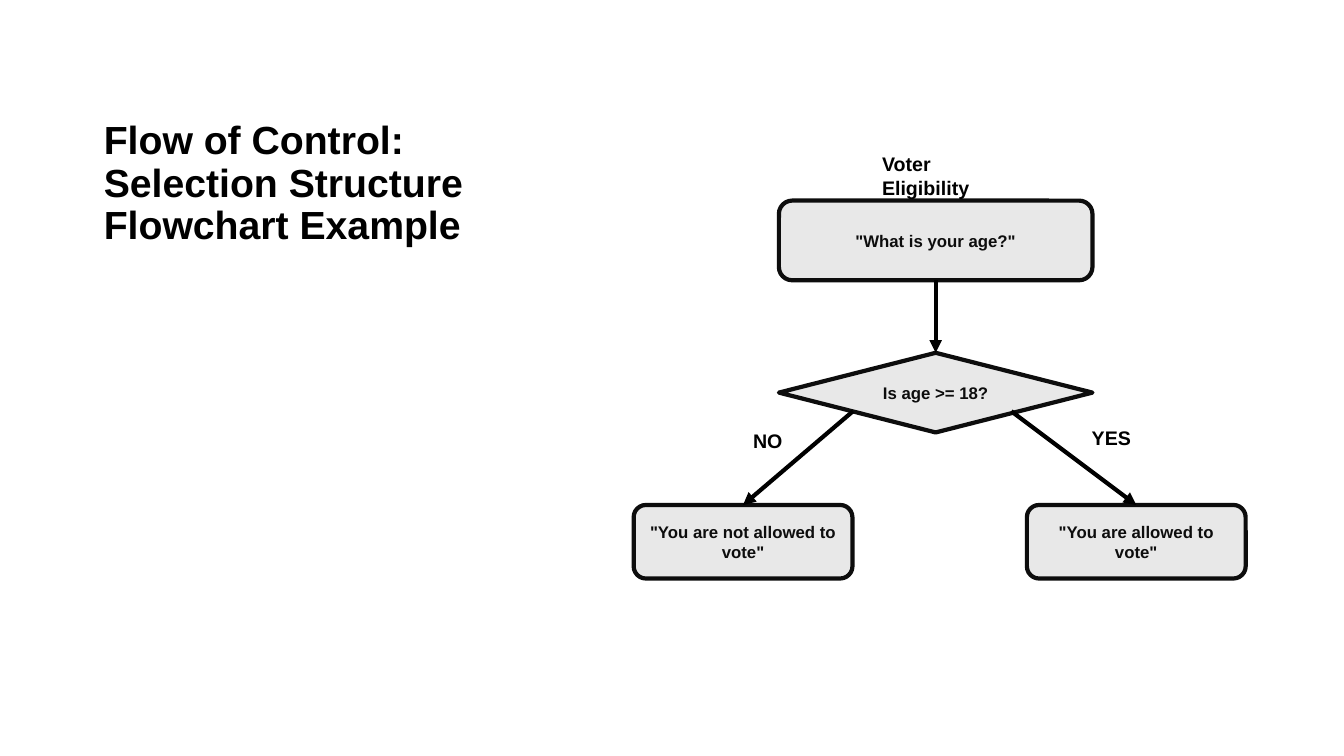
from pptx import Presentation
from pptx.dml.color import RGBColor
from pptx.enum.shapes import MSO_CONNECTOR as Link, MSO_SHAPE as Kind
from pptx.enum.text import MSO_ANCHOR as Anchor, MSO_AUTO_SIZE as Fit, PP_ALIGN as Align
from pptx.oxml.ns import qn
from pptx.util import Inches, Pt
from lxml.etree import SubElement

BLACK = RGBColor(0x00, 0x00, 0x00)
INK = RGBColor(0x0D, 0x0D, 0x0D)
GREY = RGBColor(0xE8, 0xE8, 0xE8)
FONT = "Arial"

# Flowchart grid in inches: column centres and row tops
LEFT, MID, RIGHT = 7.37, 9.28, 11.27
TOP, STEP = 1.99, 1.51
ROWS = [TOP + STEP * i for i in range(3)]
WIDE = (3.11, 0.79)
SMALL = (2.17, 0.73)


def write(frame, text, size, color, align=Align.LEFT):
    frame.word_wrap = True
    para = frame.paragraphs[0]
    para.alignment = align
    run = para.add_run()
    run.text = text
    font = run.font
    font.name, font.size, font.bold = FONT, Pt(size), True
    font.color.rgb = color
    return para


def add_title(slide, text):
    title = slide.shapes.title
    title.left, title.top = Inches(0.93), Inches(0.76)
    title.width, title.height = Inches(4.3), Inches(1.75)
    frame = title.text_frame
    frame.vertical_anchor = Anchor.BOTTOM
    frame.auto_size = Fit.NONE
    write(frame, text, 28, BLACK).line_spacing = 0.9


def add_node(chart, kind, col, row, size, text):
    """Draw a flowchart box centred on a column, with its top on a row."""
    wide, high = size
    node = chart.add_shape(kind, Inches(col - wide / 2), Inches(ROWS[row]),
                           Inches(wide), Inches(high))
    node.shadow.inherit = False
    node.fill.solid()
    node.fill.fore_color.rgb = GREY
    node.line.color.rgb = INK
    node.line.width = Pt(3)
    frame = node.text_frame
    frame.vertical_anchor = Anchor.MIDDLE
    write(frame, text, 12, INK, Align.CENTER)


def add_arrow(chart, start, end):
    arrow = chart.add_connector(Link.STRAIGHT, *map(Inches, start + end))
    arrow.line.color.rgb = BLACK
    arrow.line.width = Pt(3)
    SubElement(arrow.line._get_or_add_ln(), qn("a:tailEnd"), type="triangle")
    SubElement(arrow._element.spPr, qn("a:effectLst"))


def add_label(chart, left, top, wide, text):
    box = chart.add_textbox(*map(Inches, (left, top, wide, 0.34)))
    write(box.text_frame, text, 14, BLACK)
    box.text_frame.auto_size = Fit.SHAPE_TO_FIT_TEXT


def main():
    deck = Presentation()
    deck.slide_width, deck.slide_height = Inches(13.33), Inches(7.5)
    slide = deck.slides.add_slide(deck.slide_layouts[5])
    add_title(slide, "Flow of Control: Selection Structure Flowchart Example")

    chart = slide.shapes.add_group_shape().shapes
    add_node(chart, Kind.ROUNDED_RECTANGLE, MID, 0, WIDE, '"What is your age?"')
    add_node(chart, Kind.DIAMOND, MID, 1, WIDE, "Is age >= 18?")
    for col, text in ((RIGHT, '"You are allowed to vote"'),
                      (LEFT, '"You are not allowed to vote"')):
        add_node(chart, Kind.ROUNDED_RECTANGLE, col, 2, SMALL, text)

    fork = 4.08
    add_arrow(chart, (MID, ROWS[0] + WIDE[1]), (MID, ROWS[1]))
    add_arrow(chart, (8.46, fork), (LEFT, ROWS[2]))
    add_arrow(chart, (10.03, fork), (RIGHT, ROWS[2]))

    add_label(chart, LEFT, 4.21, 0.51, "NO")
    add_label(chart, 10.73, 4.18, 0.66, "YES")
    add_label(chart, 8.65, 1.46, 1.6, "Voter Eligibility")
    deck.save("out.pptx")


if __name__ == "__main__":
    main()
